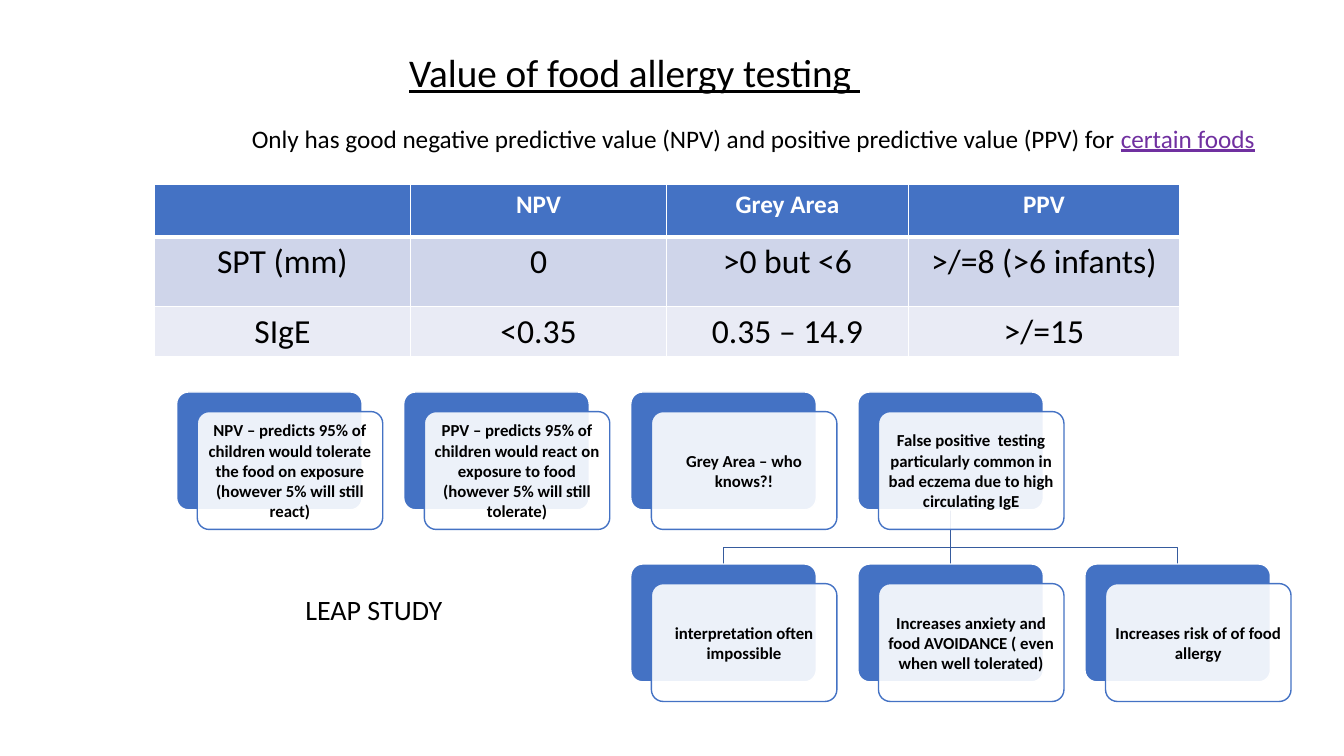
from lxml import etree
from pptx import Presentation
from pptx.dml.color import RGBColor
from pptx.enum.shapes import MSO_SHAPE
from pptx.enum.text import MSO_ANCHOR, MSO_AUTO_SIZE, PP_ALIGN
from pptx.oxml.ns import qn
from pptx.util import Pt

ROUNDED = MSO_SHAPE.ROUNDED_RECTANGLE
MIDDLE = MSO_ANCHOR.MIDDLE
CENTER = PP_ALIGN.CENTER
GROW = MSO_AUTO_SIZE.SHAPE_TO_FIT_TEXT

THEME = {
    "font": "Calibri",
    "black": "000000", "white": "FFFFFF", "blue": "4472C4",
    "branch": "365B9D", "link": "7030A0",
    "bands": ["4472C4", "CFD5EA", "E9EBF5"],
    "title": 28, "body": 18, "cell": 24, "card": 12, "study": 20,
}

BLACK = THEME["black"]
LABELS = [
    ((285.1, 31, 340, 41), [
        ("Value of food allergy testing ", {"size": THEME["title"], "underline": True})]),
    ((172.8, 84.2, 740, 29), [
        ("Only has good negative predictive value (NPV) and positive predictive value (PPV) for ",
         {"size": THEME["body"]}),
        ("certain foods", {"size": THEME["body"], "color": THEME["link"], "underline": True})]),
    ((211, 419.8, 113, 31.7), [("LEAP STUDY", {"size": THEME["study"]})]),
]

TABLE_ROWS = [
    ["", "NPV", "Grey Area", "PPV"],
    ["SPT (mm)", "0", ">0 but <6", ">/=8 (>6 infants)"],
    ["SIgE", "<0.35", "0.35 – 14.9", ">/=15"],
]
TABLE_LEFT, TABLE_TOP = 110.2, 131.8
COLUMN_WIDTHS = [183, 183, 172.7, 193.6]
ROW_HEIGHTS = [37.4, 49.7, 34]

CARDS = [
    (0, 0, "NPV – predicts 95% of children would tolerate the food on exposure (however 5% will still react)"),
    (1, 0, "PPV – predicts 95% of children would react on exposure to food (however 5% will still tolerate)"),
    (2, 0, "Grey Area – who knows?!"),
    (3, 0, "False positive  testing particularly common in bad eczema due to high circulating IgE"),
    (2, 1, "interpretation often impossible"),
    (3, 1, "Increases anxiety and food AVOIDANCE ( even when well tolerated)"),
    (4, 1, "Increases risk of of food allergy"),
]
CARD_LEFT, CARD_TOP = 126.2, 280
CARD_WIDTH, CARD_HEIGHT = 132.5, 84.2
COLUMN_PITCH, ROW_PITCH = 162.2, 122.9
FRONT_SHIFT = (14.7, 14)
PARENT_COLUMN, CHILD_ROW = 3, 1
BUS_Y = 390.9


def rgb(color):
    return RGBColor.from_string(color)


def add_run(paragraph, text, size, color=BLACK, **extra):
    run = paragraph.add_run()
    run.text = text
    formats = {"name": THEME["font"], "size": Pt(size), **extra}
    for name, value in formats.items():
        setattr(run.font, name, value)
    run.font.color.rgb = rgb(color)


def add_label(slide, box, runs):
    frame = slide.shapes.add_textbox(*map(Pt, box)).text_frame
    frame.word_wrap = False
    frame.auto_size = GROW
    for text, formats in runs:
        add_run(frame.paragraphs[0], text, **formats)


def add_border(cell, side, width):
    line = etree.SubElement(cell._tc.get_or_add_tcPr(), qn(f"a:ln{side}"), w=str(Pt(width)))
    fill = etree.SubElement(line, qn("a:solidFill"))
    etree.SubElement(fill, qn("a:srgbClr"), val=THEME["white"])


def add_value_table(slide):
    size = (sum(COLUMN_WIDTHS), sum(ROW_HEIGHTS))
    table = slide.shapes.add_table(
        len(TABLE_ROWS), len(COLUMN_WIDTHS), *map(Pt, (TABLE_LEFT, TABLE_TOP, *size))).table
    for column, width in zip(table.columns, COLUMN_WIDTHS):
        column.width = Pt(width)
    for row_index, texts in enumerate(TABLE_ROWS):
        table.rows[row_index].height = Pt(ROW_HEIGHTS[row_index])
        header = row_index == 0
        borders = {"L": 1, "R": 1, "T": 3 if row_index == 1 else 1, "B": 3 if header else 1}
        for column_index, text in enumerate(texts):
            cell = table.cell(row_index, column_index)
            for side, width in borders.items():
                add_border(cell, side, width)
            cell.fill.solid()
            cell.fill.fore_color.rgb = rgb(THEME["bands"][row_index])
            paragraph = cell.text_frame.paragraphs[0]
            paragraph.alignment = CENTER
            if text:
                add_run(paragraph, text, THEME["body" if header else "cell"],
                        THEME["white"] if header else BLACK, bold=header)


def card_corner(column, row):
    return CARD_LEFT + column * COLUMN_PITCH, CARD_TOP + row * ROW_PITCH


def add_panel(slide, left, top, fill, line):
    panel = slide.shapes.add_shape(ROUNDED, *map(Pt, (left, top, CARD_WIDTH, CARD_HEIGHT)))
    panel.adjustments[0] = 0.1
    panel.shadow.inherit = False
    panel.fill.solid()
    panel.fill.fore_color.rgb = rgb(fill)
    panel.line.color.rgb = rgb(line)
    panel.line.width = Pt(1)
    return panel


def add_card(slide, column, row, text):
    left, top = card_corner(column, row)
    add_panel(slide, left, top, THEME["blue"], THEME["white"])
    front = add_panel(slide, left + FRONT_SHIFT[0], top + FRONT_SHIFT[1],
                      THEME["white"], THEME["blue"])
    color = front.fill._xPr.find(qn("a:solidFill")).find(qn("a:srgbClr"))
    etree.SubElement(color, qn("a:alpha"), val="90000")
    frame = front.text_frame
    formats = {"word_wrap": True, "vertical_anchor": MIDDLE}
    formats.update({f"margin_{side}": Pt(3.75) for side in ("left", "top", "right", "bottom")})
    for name, value in formats.items():
        setattr(frame, name, value)
    frame.paragraphs[0].alignment = CENTER
    add_run(frame.paragraphs[0], text, THEME["card"], bold=True)


def add_branch(slide, column):
    parent_left, parent_top = card_corner(PARENT_COLUMN, 0)
    child_left, child_top = card_corner(column, CHILD_ROW)
    parent_x, child_x = parent_left + CARD_WIDTH / 2, child_left + CARD_WIDTH / 2
    builder = slide.shapes.build_freeform(Pt(parent_x), Pt(parent_top + CARD_HEIGHT))
    corners = [(parent_x, BUS_Y), (child_x, BUS_Y), (child_x, child_top)]
    builder.add_line_segments([(Pt(x), Pt(y)) for x, y in corners], close=False)
    branch = builder.convert_to_shape()
    branch.shadow.inherit = False
    branch.fill.background()
    branch.line.color.rgb = rgb(THEME["branch"])
    branch.line.width = Pt(1)


def main():
    presentation = Presentation()
    presentation.slide_width, presentation.slide_height = Pt(960), Pt(540)
    slide = presentation.slides.add_slide(presentation.slide_layouts[6])
    for box, runs in LABELS:
        add_label(slide, box, runs)
    add_value_table(slide)
    for column, row, _ in CARDS:
        if row == CHILD_ROW:
            add_branch(slide, column)
    for column, row, text in CARDS:
        add_card(slide, column, row, text)
    presentation.save("out.pptx")


if __name__ == "__main__":
    main()
